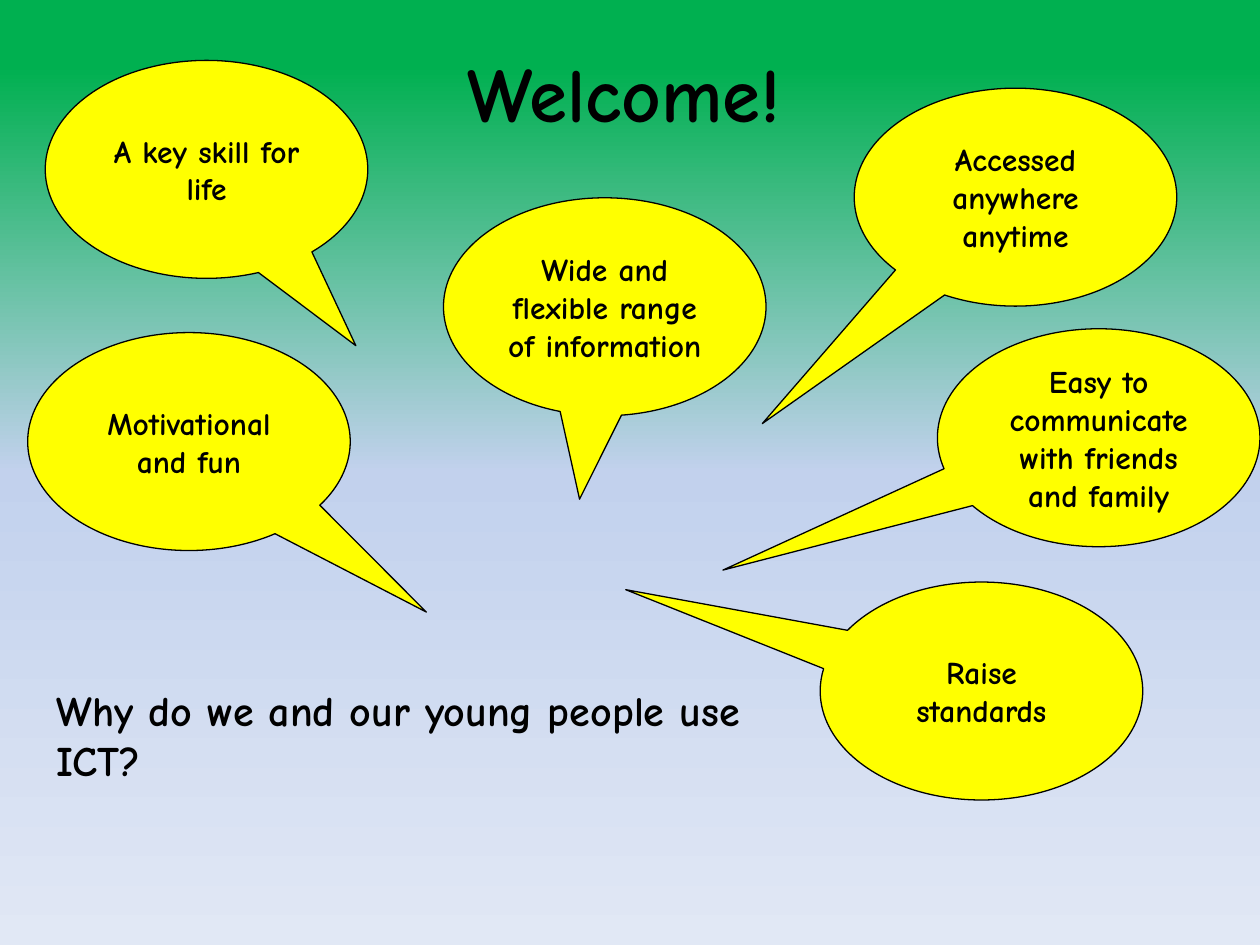
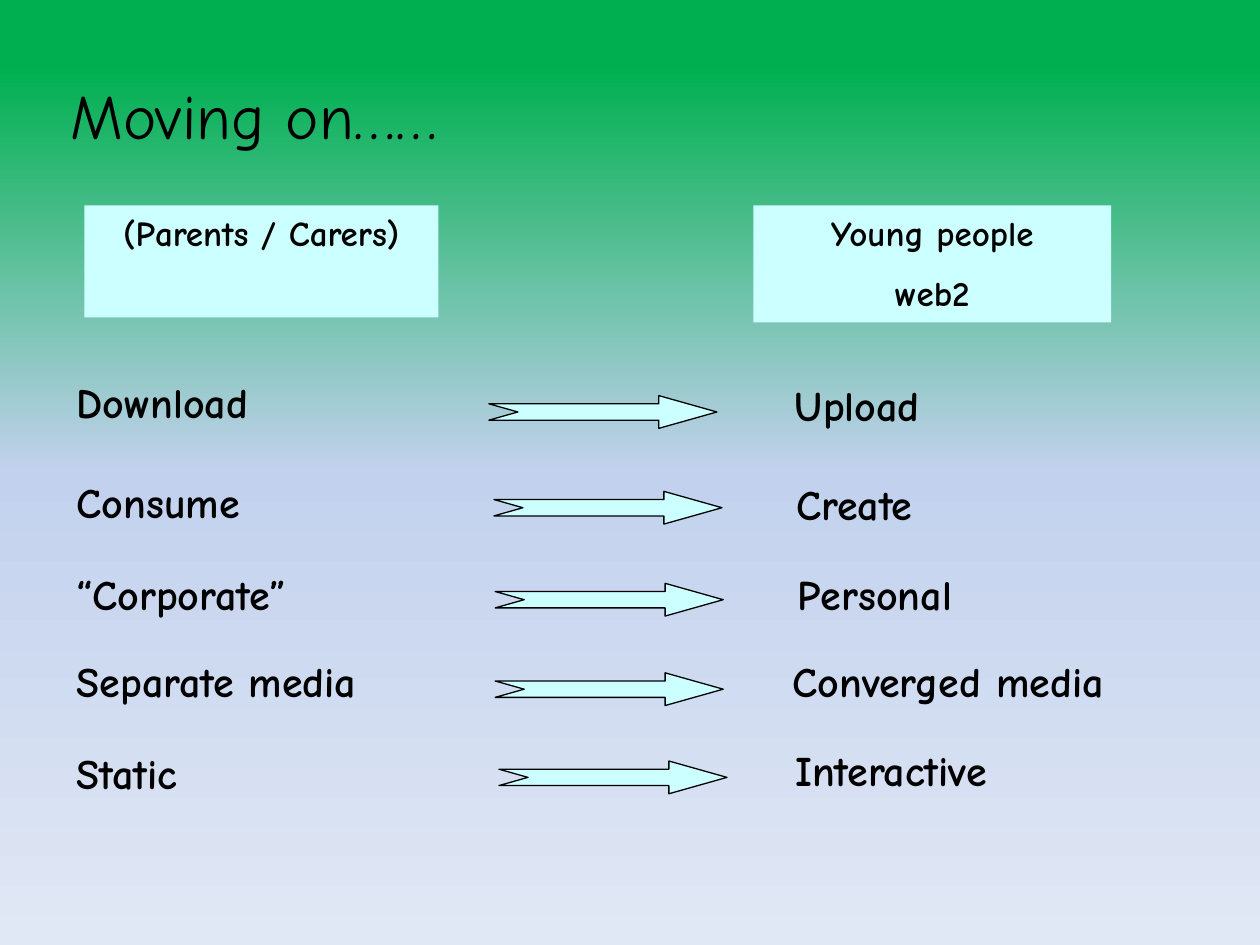
from copy import deepcopy
from dataclasses import dataclass

from pptx import Presentation
from pptx.dml.color import RGBColor
from pptx.enum.shapes import MSO_SHAPE as Preset
from pptx.enum.text import MSO_ANCHOR as Anchor, MSO_AUTO_SIZE as AutoSize, PP_ALIGN as Align
from pptx.oxml.ns import qn
from pptx.util import Inches, Pt


@dataclass(frozen=True)
class Theme:
    font: str = "Comic Neue"
    ink: str = "000000"
    callout: str = "FFFF00"
    pale: str = "CCFFFF"
    background: tuple = ((0.07, "00B050"), (0.5, "C2D1ED"), (1.0, "E1E8F5"))
    welcome_size: int = 44
    title_size: int = 36
    body_size: int = 24
    header_size: int = 20
    callout_size: int = 18
    line_width: float = 0.75


@dataclass(frozen=True)
class Box:
    left: float
    top: float
    width: float
    height: float

    def lengths(self) -> list:
        return [Inches(value) for value in (self.left, self.top, self.width, self.height)]


@dataclass(frozen=True)
class Callout:
    text: str
    left: float
    top: float
    tip: tuple[float, float]


@dataclass(frozen=True)
class Header:
    lines: tuple[str, ...]
    box: Box


@dataclass(frozen=True)
class Change:
    before: str
    before_top: float
    before_width: float
    arrow_left: float
    arrow_top: float
    after: str
    after_left: float
    after_top: float
    after_width: float


THEME = Theme()
TITLE_ONLY = 5
CALLOUT_SIZE = (2.56, 1.73)
ARROW_SIZE = (1.81, 0.26)
LABEL_HEIGHT = 0.5
BEFORE_LEFT = 0.51
TEXT_INSET = 0.1
AFTER_INSET = 0.33

CALLOUTS = (
    Callout("Accessed anywhere anytime", 6.78, 0.7, (-0.785, 1.039)),
    Callout("Easy to communicate with friends and family", 7.44, 2.61, (-1.165, 0.607)),
    Callout("Wide and flexible range of information", 3.52, 1.57, (-0.078, 0.883)),
    Callout("Raise standards", 6.51, 4.62, (-1.103, -0.465)),
    Callout("Motivational and fun", 0.22, 2.64, (0.736, 0.782)),
    Callout("A key skill for life", 0.36, 0.48, (0.463, 0.809)),
)
HEADERS = (
    Header(("(Parents / Carers)",), Box(0.67, 1.63, 2.81, 0.89)),
    Header(("Young people", "web2"), Box(5.98, 1.63, 2.84, 0.93)),
)
CHANGES = (
    Change("Download", 2.94, 1.69, 3.88, 3.14, "Upload", 5.98, 2.96, 1.57),
    Change("Consume", 3.73, 1.55, 3.92, 3.9, "Create", 5.99, 3.75, 1.58),
    Change("“Corporate”", 4.46, 2.09, 3.93, 4.63, "Personal", 6.0, 4.46, 1.85),
    Change("Separate media", 5.15, 2.92, 3.93, 5.34, "Converged media", 5.96, 5.15, 3.31),
    Change("Static", 5.88, 1.21, 3.96, 6.04, "Interactive", 5.98, 5.86, 2.32),
)


def color(value: str) -> RGBColor:
    return RGBColor.from_string(value)


def set_background(master) -> None:
    """Give every slide the same vertical gradient."""
    fill = master.background.fill
    fill.gradient()
    fill.gradient_angle = 270
    stop_list = master.element.find(".//" + qn("a:gsLst"))
    stop_list.append(deepcopy(stop_list[-1]))
    for stop, (position, value) in zip(fill.gradient_stops, THEME.background):
        stop.position = position
        stop.color.rgb = color(value)


def write(text_frame, text: str, size: int, align=Align.LEFT, bold: bool = True) -> None:
    text_frame.text = text
    for index, paragraph in enumerate(text_frame.paragraphs):
        paragraph.alignment = align
        paragraph.space_before = Pt(size / 2 if index else 0)
        for run in paragraph.runs:
            run.font.name = THEME.font
            run.font.size = Pt(size)
            run.font.bold = bold
            run.font.color.rgb = color(THEME.ink)


def add_title_slide(presentation, text: str, box: Box, size: int, align, anchor, bold: bool):
    slide = presentation.slides.add_slide(presentation.slide_layouts[TITLE_ONLY])
    title = slide.shapes.title
    title.left, title.top, title.width, title.height = box.lengths()
    title.text_frame.auto_size = AutoSize.NONE
    title.text_frame.vertical_anchor = anchor
    write(title.text_frame, text, size, align, bold)
    return slide


def add_preset(slide, preset, box: Box, fill: str, adjustments=(), outlined: bool = True):
    shape = slide.shapes.add_shape(preset, *box.lengths())
    shape.shadow.inherit = False
    shape.fill.solid()
    shape.fill.fore_color.rgb = color(fill)
    for index, value in enumerate(adjustments):
        shape.adjustments[index] = value
    if outlined:
        shape.line.color.rgb = color(THEME.ink)
        shape.line.width = Pt(THEME.line_width)
    else:
        shape.line.fill.background()
    return shape


def add_label(slide, text: str, box: Box, wrap: bool = False, inset: float = TEXT_INSET) -> None:
    text_frame = slide.shapes.add_textbox(*box.lengths()).text_frame
    text_frame.word_wrap = wrap
    text_frame.auto_size = AutoSize.SHAPE_TO_FIT_TEXT
    text_frame.margin_left = Inches(inset)
    write(text_frame, text, THEME.body_size)


def add_callout(slide, callout: Callout) -> None:
    box = Box(callout.left, callout.top, *CALLOUT_SIZE)
    shape = add_preset(slide, Preset.OVAL_CALLOUT, box, THEME.callout, callout.tip)
    shape.text_frame.vertical_anchor = Anchor.MIDDLE
    write(shape.text_frame, callout.text, THEME.callout_size, Align.CENTER)


def add_header(slide, header: Header) -> None:
    shape = add_preset(slide, Preset.RECTANGLE, header.box, THEME.pale, outlined=False)
    shape.text_frame.vertical_anchor = Anchor.TOP
    write(shape.text_frame, "\n".join(header.lines), THEME.header_size, Align.CENTER)


def add_change(slide, change: Change) -> None:
    add_label(slide, change.before,
              Box(BEFORE_LEFT, change.before_top, change.before_width, LABEL_HEIGHT))
    add_preset(slide, Preset.NOTCHED_RIGHT_ARROW,
               Box(change.arrow_left, change.arrow_top, *ARROW_SIZE), THEME.pale, (0.5, 1.774))
    add_label(slide, change.after,
              Box(change.after_left, change.after_top, change.after_width, LABEL_HEIGHT),
              inset=AFTER_INSET)


def build_welcome(presentation) -> None:
    slide = add_title_slide(presentation, "Welcome!", Box(0.53, 0.31, 8.85, 1.25),
                            THEME.welcome_size, Align.CENTER, Anchor.TOP, bold=True)
    for callout in CALLOUTS:
        add_callout(slide, callout)
    add_label(slide, "Why do we and our young people use ICT?",
              Box(0.35, 5.38, 5.81, 0.91), wrap=True)


def build_moving_on(presentation) -> None:
    slide = add_title_slide(presentation, "Moving on……", Box(0.46, 0.28, 8.85, 1.25),
                            THEME.title_size, Align.LEFT, Anchor.MIDDLE, bold=False)
    for header in HEADERS:
        add_header(slide, header)
    for change in CHANGES:
        add_change(slide, change)


def main() -> None:
    presentation = Presentation()
    presentation.slide_width = Inches(10)
    presentation.slide_height = Inches(7.5)
    set_background(presentation.slide_master)
    build_welcome(presentation)
    build_moving_on(presentation)
    presentation.save("out.pptx")


if __name__ == "__main__":
    main()
